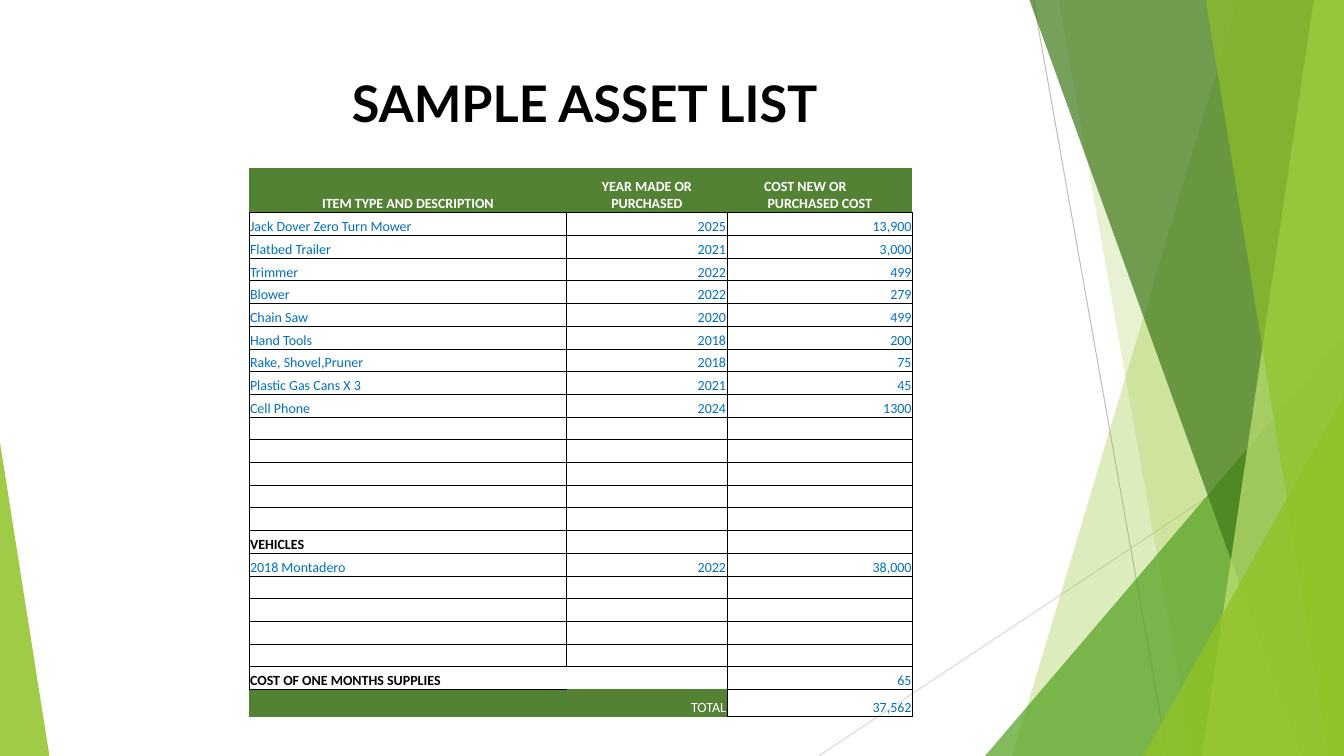
from dataclasses import dataclass

from lxml.etree import SubElement as Sub
from pptx import Presentation
from pptx.dml.color import RGBColor
from pptx.enum.shapes import MSO_CONNECTOR as Link, MSO_SHAPE as Kind
from pptx.enum.text import MSO_ANCHOR as Anchor, MSO_AUTO_SIZE as Fit, PP_ALIGN as Align
from pptx.oxml.ns import qn
from pptx.slide import Slide
from pptx.table import _Cell as Cell
from pptx.util import Inches, Pt

WIDE, HIGH = 13.33, 7.5
BLACK = RGBColor(0x00, 0x00, 0x00)
WHITE = RGBColor(0xFF, 0xFF, 0xFF)
BLUE = RGBColor(0x00, 0x70, 0xC0)
GREEN = RGBColor(0x54, 0x82, 0x35)
LIME = RGBColor(0x90, 0xC2, 0x26)
LEAF = RGBColor(0x54, 0xA0, 0x21)
PINE = RGBColor(0x3F, 0x78, 0x19)
PALE = RGBColor(0xC0, 0xE4, 0x74)
GREY = RGBColor(0xBF, 0xBF, 0xBF)
MIST = RGBColor(0xD9, 0xD9, 0xD9)
PLAIN = "{2D5ABB26-0587-4C30-8999-92F81FD0307C}"


@dataclass
class Ray:
    start: tuple[float, float]
    end: tuple[float, float]
    color: RGBColor


@dataclass
class Pane:
    top: float
    foot: float
    color: RGBColor
    alpha: int


@dataclass
class Wedge:
    left: float
    top: float
    width: float
    peak: int
    color: RGBColor
    alpha: int


@dataclass
class Row:
    item: str = ""
    year: str = ""
    cost: str = ""
    bold: bool = False
    green: int = 0
    edges: tuple[str, str, str] = ("LRTB", "LRTB", "LRTB")


RAYS = [
    Ray((10.25, 0), (11.58, HIGH), GREY),
    Ray((WIDE, 4.03), (8.12, HIGH), MIST),
]
FACETS = [
    Pane(12.28, 10.04, LIME, 30),
    Pane(10.5, 11.83, LIME, 20),
    Wedge(9.77, 3.33, 3.56, 1, LEAF, 72),
    Pane(10.21, 12.91, PINE, 70),
    Pane(13.03, 11.92, PALE, 70),
    Pane(11.96, 13.18, LIME, 65),
    Wedge(11.34, 3.93, 1.99, 1, LIME, 80),
    Wedge(0, 4.39, 0.49, 0, LIME, 85),
]
ROWS = [
    Row("ITEM TYPE AND DESCRIPTION", "YEAR MADE OR PURCHASED",
        "COST NEW OR\nPURCHASED COST", True, 3, ("B", "B", "B")),
    Row("Jack Dover Zero Turn Mower", "2025", "13,900"),
    Row("Flatbed Trailer", "2021", "3,000"),
    Row("Trimmer", "2022", "499"),
    Row("Blower", "2022", "279"),
    Row("Chain Saw", "2020", "499"),
    Row("Hand Tools", "2018", "200"),
    Row("Rake, Shovel,Pruner", "2018", "75"),
    Row("Plastic Gas Cans X 3", "2021", "45"),
    Row("Cell Phone", "2024", "1300"),
    *[Row()] * 5,
    Row("VEHICLES", bold=True),
    Row("2018 Montadero", "2022", "38,000"),
    *[Row()] * 4,
    Row("COST OF ONE MONTHS SUPPLIES", "", "65", True, 0, ("LTB", "TR", "LRTB")),
    Row("", "TOTAL", "37,562", False, 2, ("T", "R", "LRTB")),
    Row(edges=("", "", "T")),
]
COLS = [3.15, 1.59, 1.84]
TALL = {0: 0.44, len(ROWS) - 2: 0.27}
TABLE = 5.67
STEP = (TABLE - sum(TALL.values())) / (len(ROWS) - len(TALL))


def draw_ray(slide: Slide, ray: Ray) -> None:
    ends = [Inches(n) for n in (*ray.start, *ray.end)]
    line = slide.shapes.add_connector(Link.STRAIGHT, *ends)
    line.line.color.rgb = ray.color
    line.line.width = Pt(0.75)
    Sub(line._element.spPr, qn("a:effectLst"))


def draw_facet(slide: Slide, facet: Pane | Wedge) -> None:
    if isinstance(facet, Pane):
        pen = slide.shapes.build_freeform(Inches(facet.top), 0)
        spots = [(WIDE, 0), (WIDE, HIGH), (facet.foot, HIGH)]
        pen.add_line_segments([(Inches(x), Inches(y)) for x, y in spots])
        shape = pen.convert_to_shape()
    else:
        shape = slide.shapes.add_shape(
            Kind.ISOSCELES_TRIANGLE, Inches(facet.left), Inches(facet.top),
            Inches(facet.width), Inches(HIGH - facet.top))
        shape.adjustments[0] = facet.peak
    shape.shadow.inherit = False
    shape.line.fill.background()
    shape.fill.solid()
    shape.fill.fore_color.rgb = facet.color
    tint = shape._element.spPr.find(qn("a:solidFill")).find(qn("a:srgbClr"))
    Sub(tint, qn("a:alpha"), val=str(facet.alpha * 1000))


def draw_edges(cell: Cell, edges: str) -> None:
    props = cell._tc.get_or_add_tcPr()
    for side in "LRTB":
        edge = Sub(props, qn(f"a:ln{side}"), w=str(Pt(0.5)))
        if side in edges:
            Sub(Sub(edge, qn("a:solidFill")), qn("a:srgbClr"), val=str(BLACK))
        else:
            Sub(edge, qn("a:noFill"))


def fill_cell(cell: Cell, row: Row, col: int) -> None:
    draw_edges(cell, row.edges[col])
    green = col < row.green
    bold = row.bold and (green or col == 0)
    if green:
        cell.fill.solid()
        cell.fill.fore_color.rgb = GREEN
    else:
        cell.fill.background()
    cell.margin_left = cell.margin_right = cell.margin_top = Inches(0.01)
    cell.margin_bottom = 0
    cell.vertical_anchor = Anchor.BOTTOM
    text = (row.item, row.year, row.cost)[col]
    cell.text_frame.text = text
    for para in cell.text_frame.paragraphs:
        if green and bold:
            para.alignment = Align.CENTER
        else:
            para.alignment = Align.RIGHT if col else Align.LEFT
        for run in para.runs:
            run.font.name = "Calibri"
            run.font.size = Pt(10)
            run.font.bold = bold
            run.font.color.rgb = WHITE if green else BLACK if bold else BLUE
        if not text:
            Sub(para._p, qn("a:endParaRPr"), sz="1000")


def draw_table(slide: Slide) -> None:
    frame = slide.shapes.add_table(
        len(ROWS), len(COLS), Inches(2.47), Inches(1.67),
        Inches(sum(COLS)), Inches(TABLE))
    table = frame.table
    table._tbl.tblPr.find(qn("a:tableStyleId")).text = PLAIN
    table.first_row = table.horz_banding = False
    for col, width in enumerate(COLS):
        table.columns[col].width = Inches(width)
    for num, row in enumerate(ROWS):
        table.rows[num].height = Inches(TALL.get(num, STEP))
        for col in range(len(COLS)):
            fill_cell(table.cell(num, col), row, col)
    lead = table.cell(0, 2).text_frame.paragraphs[0]
    lead.alignment = Align.LEFT
    lead._p.get_or_add_pPr().set("marL", str(Inches(0.36)))


def draw_title(slide: Slide) -> None:
    title = slide.shapes.title
    title.left, title.top = Inches(2.33), Inches(0.67)
    title.width, title.height = Inches(6.94), Inches(0.92)
    frame = title.text_frame
    frame.text = "SAMPLE ASSET LIST"
    frame.auto_size = Fit.NONE
    frame.vertical_anchor = Anchor.TOP
    para = frame.paragraphs[0]
    para.alignment = Align.CENTER
    font = para.runs[0].font
    font.name, font.size, font.bold = "Lato", Pt(36), True
    font.color.rgb = BLACK


def main() -> None:
    deck = Presentation()
    deck.slide_width, deck.slide_height = Inches(WIDE), Inches(HIGH)
    slide = deck.slides.add_slide(deck.slide_layouts[5])
    for ray in RAYS:
        draw_ray(slide, ray)
    for facet in FACETS:
        draw_facet(slide, facet)
    draw_title(slide)
    draw_table(slide)
    deck.save("out.pptx")


if __name__ == "__main__":
    main()
